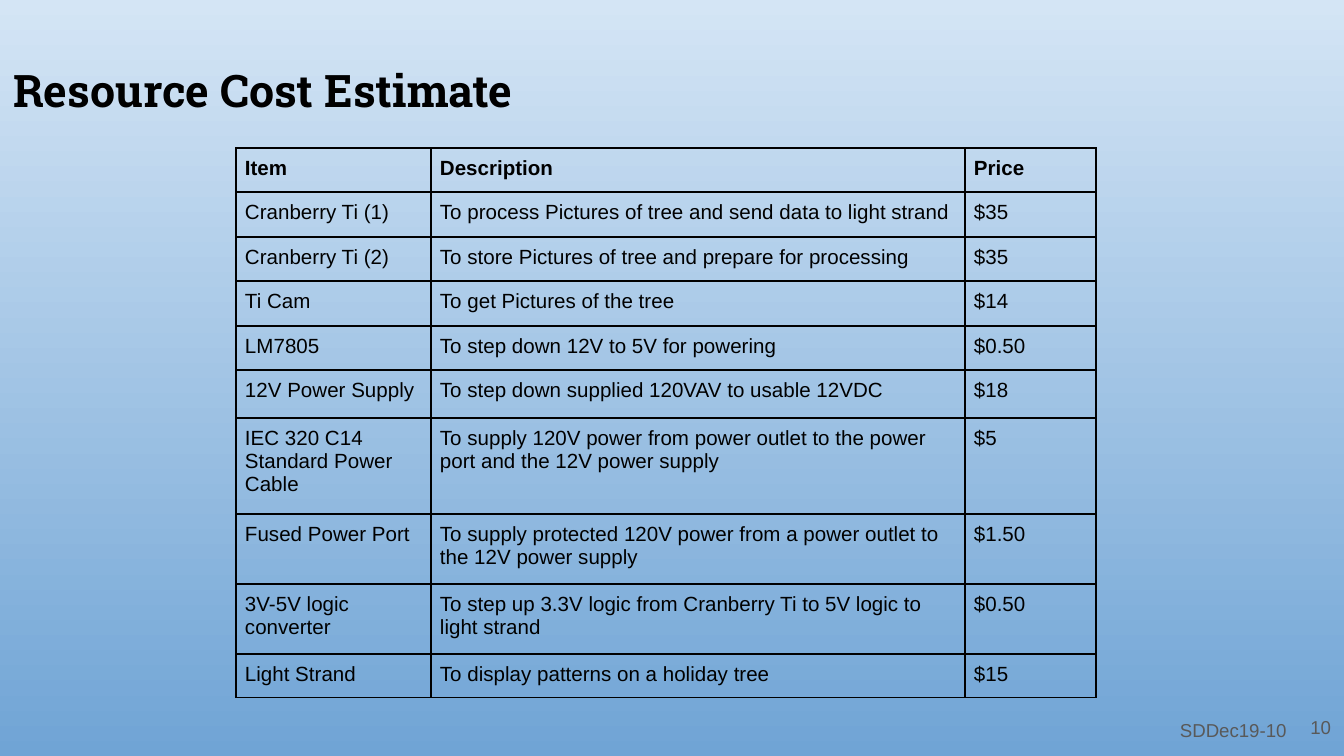
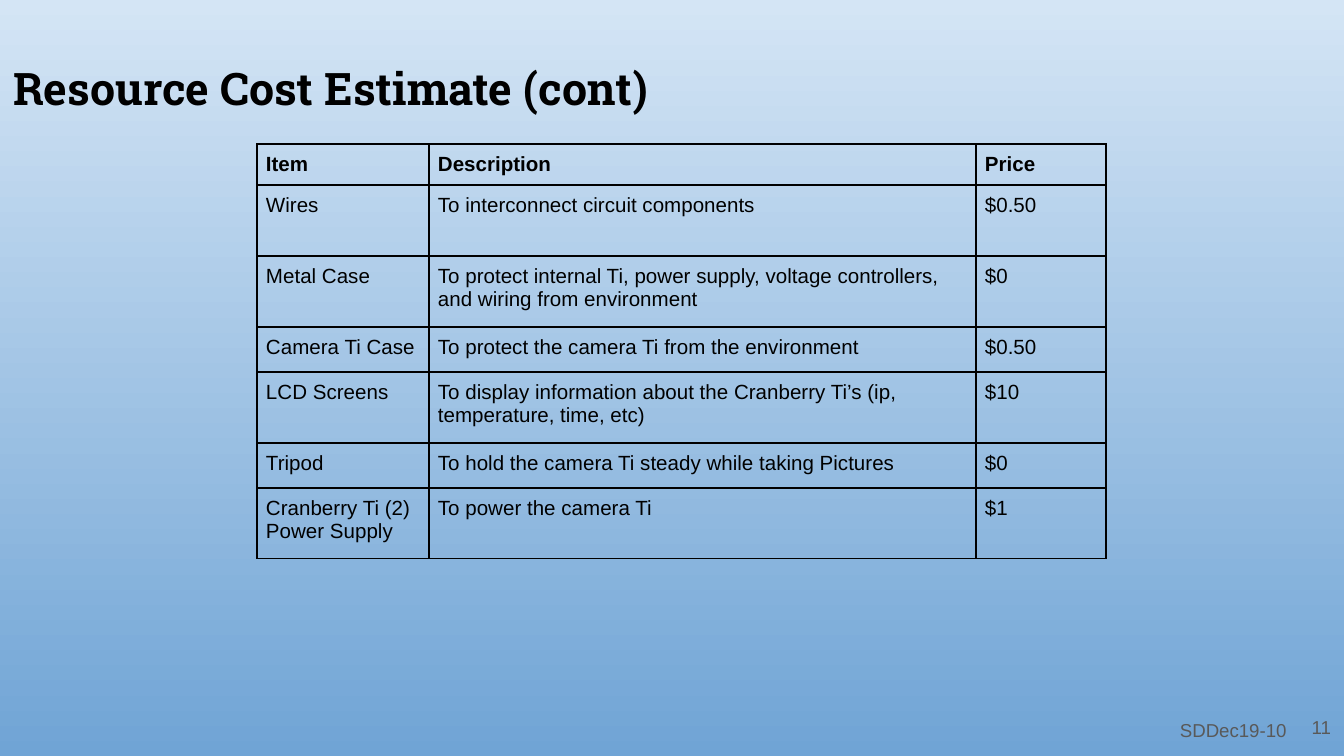
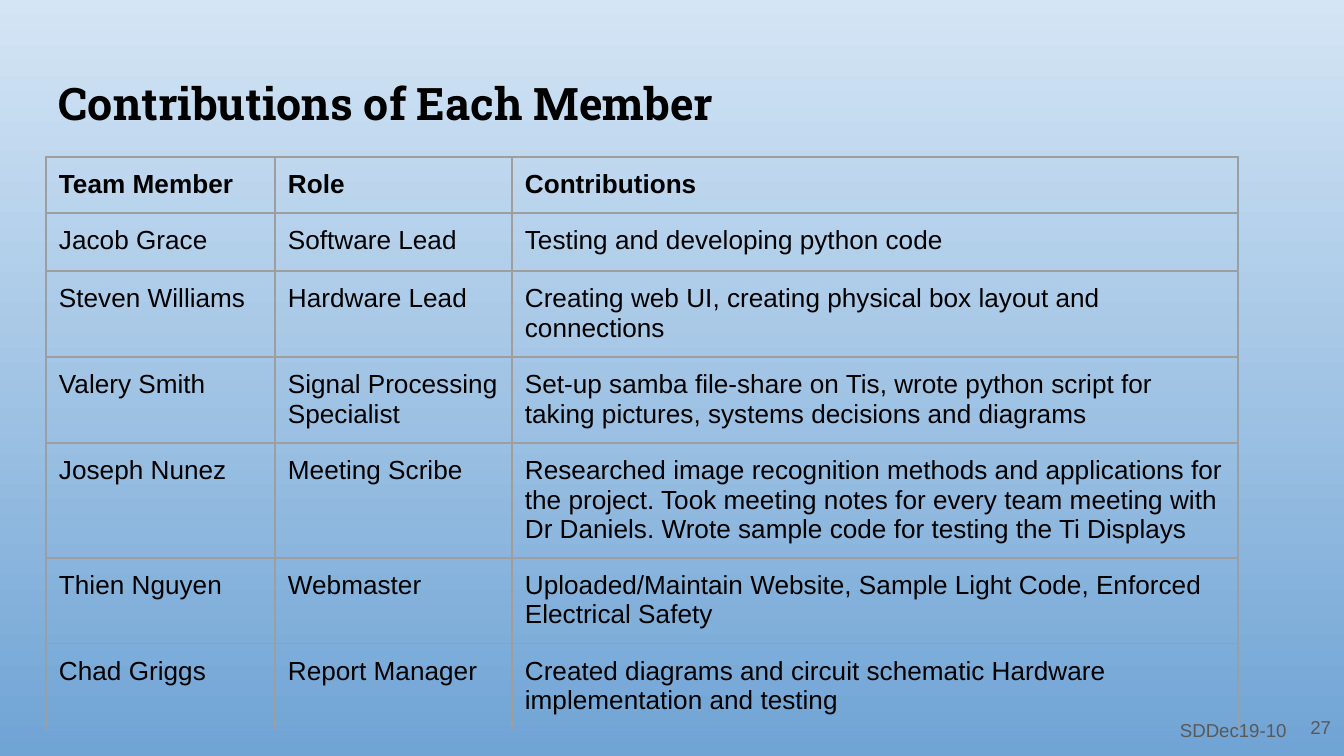
from dataclasses import dataclass

from lxml import etree
from pptx import Presentation
from pptx import util as u
from pptx.dml.color import RGBColor
from pptx.enum import text
from pptx.oxml import ns

PX = 914400 / 134.4  # EMU in one px


@dataclass(frozen=True)
class Theme:
    sky_top: str = "D4E5F5"
    sky_bottom: str = "70A4D5"
    ink: str = "000000"
    footer_ink: str = "595959"
    grey_rule: str = "9E9E9E"
    title_font: str = "Roboto Slab"
    body_font: str = "Arial"
    title_size: int = 24
    cost_size: int = 11
    team_size: int = 14
    footer_size: int = 10
    inset: int = 13
    cost_inset: int = 9


theme = Theme()


def px(*lengths):
    return [u.Emu(round(length * PX)) for length in lengths]


def write(box, words, size, color, font=theme.body_font, bold=False,
          align=text.PP_ALIGN.LEFT, anchor=text.MSO_ANCHOR.TOP, inset=theme.inset):
    """Fill a shape or table cell with one formatted paragraph."""
    frame = box.text_frame
    frame.text = words
    frame.word_wrap = True
    # Cells carry their own margins and anchor; shapes keep them on the frame
    holder = box if hasattr(box, "margin_left") else frame
    holder.margin_left = holder.margin_right = px(inset)[0]
    holder.margin_top = holder.margin_bottom = px(inset)[0]
    holder.vertical_anchor = anchor
    para = frame.paragraphs[0]
    para.alignment = align
    para.font.name = font
    para.font.size = u.Pt(size)
    para.font.bold = bold
    para.font.color.rgb = RGBColor.from_string(color)


# Content
cost_header = ("Item", "Description", "Price")
cost_style = dict(size=theme.cost_size, inset=theme.cost_inset,
                  rule=theme.ink, rule_width=1, corner_width=1)
team_style = dict(size=theme.team_size, inset=theme.inset,
                  rule=theme.grey_rule, rule_width=0.75, corner_width=1.5)

pages = [
    dict(
        title="Resource Cost Estimate", title_at=(0, 19, 801, 111), number="10",
        table_at=(236, 148), columns=(195, 534, 131),
        heights=(44, 45, 44, 45, 44, 48, 96, 70, 70, 44), style=cost_style,
        rows=[
            cost_header,
            ("Cranberry Ti (1)", "To process Pictures of tree and send data to light strand", "$35"),
            ("Cranberry Ti (2)", "To store Pictures of tree and prepare for processing", "$35"),
            ("Ti Cam", "To get Pictures of the tree", "$14"),
            ("LM7805", "To step down 12V to 5V for powering", "$0.50"),
            ("12V Power Supply", "To step down supplied 120VAV to usable 12VDC", "$18"),
            ("IEC 320 C14 Standard Power Cable",
             "To supply 120V power from power outlet to the power port and the 12V power supply", "$5"),
            ("Fused Power Port",
             "To supply protected 120V power from a power outlet to the 12V power supply", "$1.50"),
            ("3V-5V logic converter",
             "To step up 3.3V logic from Cranberry Ti to 5V logic to light strand", "$0.50"),
            ("Light Strand", "To display patterns on a holiday tree", "$15"),
        ],
    ),
    dict(
        title="Resource Cost Estimate (cont)", title_at=(0, 17, 684, 111), number="11",
        table_at=(257, 144), columns=(172, 547, 130),
        heights=(41, 71, 71, 45, 71, 45, 71), style=cost_style,
        rows=[
            cost_header,
            ("Wires", "To interconnect circuit components", "$0.50"),
            ("Metal Case",
             "To protect internal Ti, power supply, voltage controllers, and wiring from environment", "$0"),
            ("Camera Ti Case", "To protect the camera Ti from the environment", "$0.50"),
            ("LCD Screens",
             "To display information about the Cranberry Ti’s (ip, temperature, time, etc)", "$10"),
            ("Tripod", "To hold the camera Ti steady while taking Pictures", "$0"),
            ("Cranberry Ti (2) Power Supply", "To power the camera Ti", "$1"),
        ],
    ),
    dict(
        title="Contributions of Each Member", title_at=(46, 84, 868, 58), number="27",
        table_at=(46, 157), columns=(229, 237, 726),
        heights=(56, 58, 86, 86, 115, 86, 86), style=team_style,
        rows=[
            ("Team Member", "Role", "Contributions"),
            ("Jacob Grace", "Software Lead", "Testing and developing python code"),
            ("Steven Williams", "Hardware Lead",
             "Creating web UI, creating physical box layout and connections"),
            ("Valery Smith", "Signal Processing Specialist",
             "Set-up samba file-share on Tis, wrote python script for taking pictures, "
             "systems decisions and diagrams"),
            ("Joseph Nunez", "Meeting Scribe",
             "Researched image recognition methods and applications for the project. "
             "Took meeting notes for every team meeting with Dr Daniels. "
             "Wrote sample code for testing the Ti Displays"),
            ("Thien Nguyen", "Webmaster",
             "Uploaded/Maintain Website, Sample Light Code, Enforced Electrical Safety"),
            ("Chad Griggs", "Report Manager",
             "Created diagrams and circuit schematic Hardware implementation and testing"),
        ],
    ),
]
# Edges that touch the top-left header cell, as (row, column, side)
corner_edges = {(0, 0, side) for side in "LRTB"} | {(0, 1, "L"), (1, 0, "T")}

# Deck and shared background
deck = Presentation()
deck.slide_width, deck.slide_height = px(1344, 756)
sky = deck.slide_master.background.fill
sky.gradient()
sky.gradient_angle = 270
for stop, position, color in zip(sky.gradient_stops, (0, 1), (theme.sky_top, theme.sky_bottom)):
    stop.position = position
    stop.color.rgb = RGBColor.from_string(color)
title_only = deck.slide_layouts[5]

for page in pages:
    slide = deck.slides.add_slide(title_only)
    style = page["style"]

    # Title
    title = slide.shapes.title
    title.left, title.top, title.width, title.height = px(*page["title_at"])
    write(title, page["title"], theme.title_size, theme.ink, theme.title_font,
          bold=True, anchor=text.MSO_ANCHOR.BOTTOM)

    # Table
    table = slide.shapes.add_table(
        len(page["rows"]), len(page["columns"]),
        *px(*page["table_at"], sum(page["columns"]), sum(page["heights"]))).table
    table.first_row = table.horz_banding = False
    for column, width in zip(table.columns, px(*page["columns"])):
        column.width = width
    for row, height in zip(table.rows, px(*page["heights"])):
        row.height = height

    for r, entries in enumerate(page["rows"]):
        for c, words in enumerate(entries):
            cell = table.cell(r, c)
            write(cell, words, style["size"], theme.ink, bold=r == 0, inset=style["inset"])
            # Cell borders
            properties = cell._tc.get_or_add_tcPr()
            for side in "LRTB":
                width = style["corner_width" if (r, c, side) in corner_edges else "rule_width"]
                line = etree.SubElement(properties, ns.qn(f"a:ln{side}"), w=str(u.Pt(width)))
                fill = etree.SubElement(line, ns.qn("a:solidFill"))
                etree.SubElement(fill, ns.qn("a:srgbClr"), val=style["rule"])
            cell.fill.background()

    # Footer: page number and team code
    number = slide.shapes.add_textbox(*px(1199, 698, 145, 58))
    write(number, page["number"], theme.footer_size, theme.footer_ink,
          align=text.PP_ALIGN.RIGHT, anchor=text.MSO_ANCHOR.MIDDLE)
    team_code = slide.shapes.add_textbox(*px(1167, 708, 138, 43))
    write(team_code, "SDDec19-10", theme.footer_size, theme.footer_ink)

deck.save("out.pptx")
